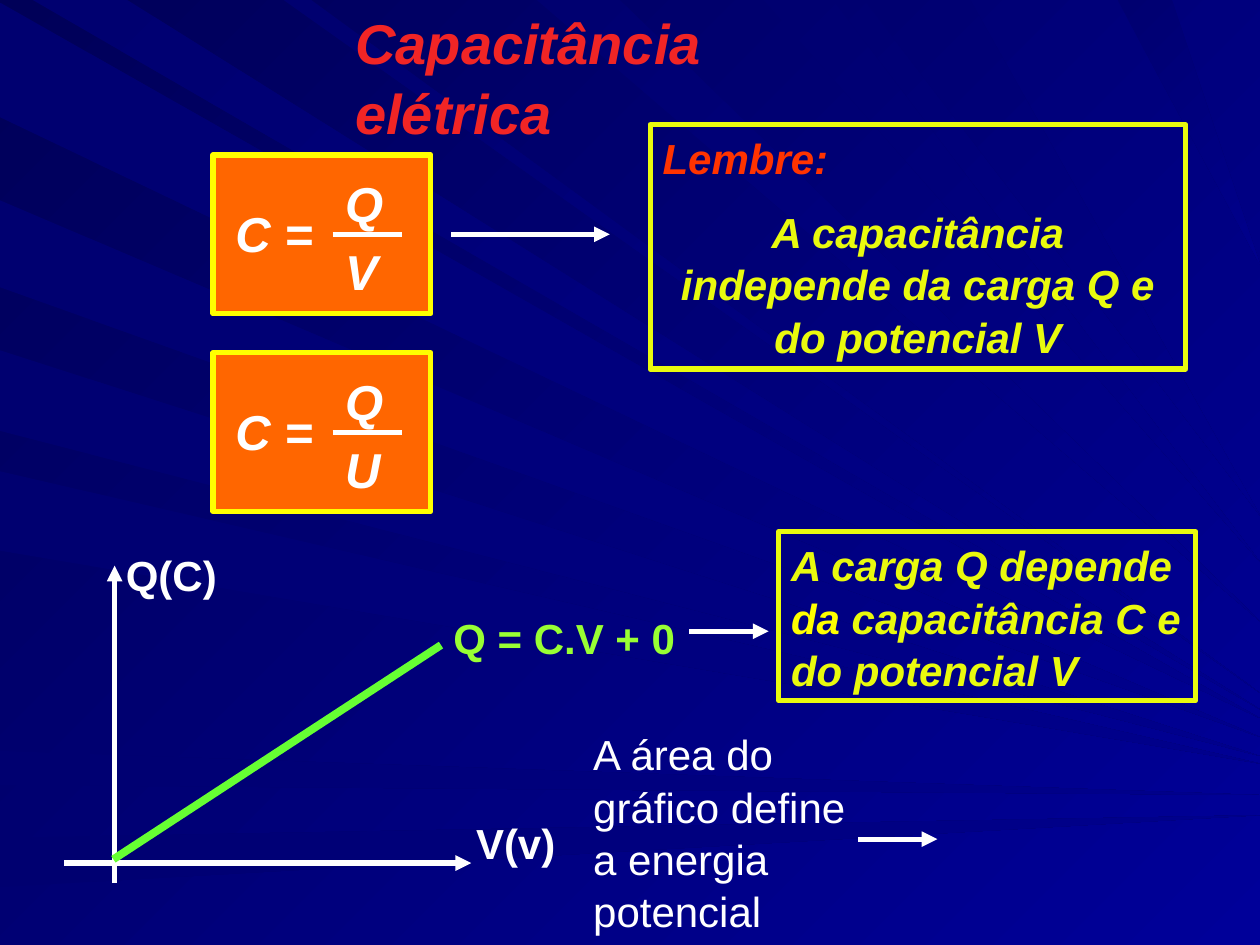
from lxml import etree
from pptx import Presentation
from pptx.dml.color import RGBColor
from pptx.enum.shapes import MSO_CONNECTOR, MSO_SHAPE
from pptx.enum.text import MSO_ANCHOR, PP_ALIGN
from pptx.oxml.ns import qn
from pptx.util import Pt

PX = 9144
WIDTH, HEIGHT = 1000, 750
TOP, MIDDLE = MSO_ANCHOR.TOP, MSO_ANCHOR.MIDDLE
LEFT, CENTER = PP_ALIGN.LEFT, PP_ALIGN.CENTER
RECTANGLE, STRAIGHT = MSO_SHAPE.RECTANGLE, MSO_CONNECTOR.STRAIGHT
COLORS = {
    "title": "F12525", "white": "FFFFFF", "formula": "FF6600", "border": "FFFF00",
    "note": "E9FA0E", "reminder": "FF3300", "curve": "66FF33", "equation": "99FF33",
    "sky_dark": "000058", "sky_light": "000099", "ray_dark": "000070", "ray_light": "00008C",
}
LEFT_RAYS = [(2, 93, 570), (159, 228, 585), (278, 342, 600), (374, 437, 606),
             (596, 623, 631), (665, 704, 647)]
TOP_RAYS = [(26, 101, 563), (225, 247, 550), (426, 492, 493), (606, 661, 446),
            (686, 770, 409), (887, 930, 210)]


def rgb(name):
    """Return the colour for a palette name."""
    return RGBColor.from_string(COLORS[name])


def emu(*lengths):
    """Turn px into EMU."""
    return [length * PX for length in lengths]


def fade(fill, start, end, angle):
    """Fill with a two-stop gradient turned clockwise by angle."""
    fill.gradient()
    fill.gradient_angle = -angle % 360
    for stop, color in zip(fill.gradient_stops, (start, end)):
        stop.color.rgb = rgb(color)


def write(shape, paragraphs, size=24, bold=True, italic=True, anchor=TOP, wrap=True):
    """Write paragraphs given as (runs, space before, alignment)."""
    frame = shape.text_frame
    frame.word_wrap, frame.vertical_anchor = wrap, anchor
    style = {"name": "Arial", "size": Pt(size), "bold": bold, "italic": italic}
    for index, (runs, before, align) in enumerate(paragraphs):
        paragraph = frame.add_paragraph() if index else frame.paragraphs[0]
        layout = {"alignment": align, "space_before": Pt(before), "line_spacing": 1.04}
        for key, value in layout.items():
            setattr(paragraph, key, value)
        for words, color in runs:
            run = paragraph.add_run()
            run.text = words
            for key, value in style.items():
                setattr(run.font, key, value)
            run.font.color.rgb = rgb(color)


def label(slide, box, words, color="white", **style):
    """Add a text box holding one paragraph."""
    write(slide.shapes.add_textbox(*emu(*box)), [([(words, color)], 0, LEFT)], **style)


def panel(slide, box, border, fill=None):
    """Add a bordered rectangle."""
    shape = slide.shapes.add_shape(RECTANGLE, *emu(*box))
    shape.shadow.inherit = False
    if fill:
        shape.fill.solid()
        shape.fill.fore_color.rgb = rgb(fill)
    else:
        shape.fill.background()
    shape.line.color.rgb, shape.line.width = rgb(border), Pt(3)
    return shape


def stroke(slide, ends, color="white", width=3, arrow=True):
    """Draw a straight line, with an arrowhead at its end if asked."""
    connector = slide.shapes.add_connector(STRAIGHT, *emu(*ends))
    connector.line.color.rgb, connector.line.width = rgb(color), Pt(width)
    properties = connector._element.spPr
    if arrow:
        etree.SubElement(properties.find(qn("a:ln")), qn("a:tailEnd"), type="triangle")
    etree.SubElement(properties, qn("a:effectLst"))


def ray(slide, start, end, tip, angle):
    """Draw one ray from an edge of the slide to a tip on its right edge."""
    outline = slide.shapes.build_freeform(*start, scale=PX)
    outline.add_line_segments([end, (WIDTH, tip)])
    beam = outline.convert_to_shape()
    beam.shadow.inherit = False
    beam.line.fill.background()
    fade(beam.fill, "ray_dark", "ray_light", angle)


def backdrop(slide):
    """Paint the blue background and its rays."""
    fade(slide.background.fill, "sky_dark", "sky_light", 45)
    for start, end, tip in LEFT_RAYS:
        ray(slide, (0, start), (0, end), tip, 0)
    for start, end, tip in TOP_RAYS:
        ray(slide, (start, 0), (end, 0), tip, 45)


def heading(slide, box):
    """Place the title above the backdrop."""
    title = slide.shapes.title
    slide.shapes._spTree.append(title._element)
    for key, value in zip(("left", "top", "width", "height"), emu(*box)):
        setattr(title, key, value)
    title.text_frame.margin_right = 100 * PX
    write(title, [([("Capacitância elétrica", "title")], 0, LEFT)], size=32)


def formula(slide, box, denominator):
    """Draw the boxed fraction C = Q over the denominator."""
    left, top, _, height = box
    bar, middle = left + 95, top + height // 2
    panel(slide, box, "border", "formula")
    label(slide, (left + 8, top + 32, 102, 57), "C =", size=28)
    fraction = slide.shapes.add_textbox(*emu(bar, top + 8, 157, 110))
    write(fraction, [([(part, "white")], before, LEFT)
                     for part, before in (("Q", 0), (denominator, 4))], size=28)
    stroke(slide, (bar, middle, bar + 55, middle), arrow=False)


def reminder(slide, box):
    """Write the boxed reminder about capacitance."""
    write(panel(slide, box, "note"), [
        ([("Lembre:", "reminder")], 0, LEFT),
        ([("A capacitância independe da carga Q e do potencial V", "note")], 12, CENTER)])


def charge_note(slide, box):
    """Write the boxed note about charge."""
    write(panel(slide, box, "note"), [
        ([("A carga Q depende ", "note"), ("da ", "border"),
          ("capacitância C e do potencial V", "note")], 0, LEFT)])


def charge_graph(slide, box):
    """Sketch charge against potential with its axes and labels."""
    left, top, width, height = box
    base, axis, curve_end = top + height - 16, left + 40, left + 299
    stroke(slide, (axis, top + height, axis, top))
    stroke(slide, (left, base, left + width, base))
    stroke(slide, (axis - 1, base - 3, curve_end, top + 63), "curve", 4.5, arrow=False)
    for x, y, length, words, color in (
            (axis - 1, top - 19, 92, "Q(C)", "white"),
            (left + 317, base - 42, 83, "V(v)", "white"),
            (curve_end, top + 31, 196, "Q = C.V + 0", "equation")):
        label(slide, (x, y, length, 50), words, color,
              italic=False, anchor=MIDDLE, wrap=False)


def main():
    """Build and save the slide."""
    deck = Presentation()
    deck.slide_width, deck.slide_height = emu(WIDTH, HEIGHT)
    slide = deck.slides.add_slide(deck.slide_layouts[5])
    backdrop(slide)
    heading(slide, (272, 0, 461, 63))
    for top, denominator in ((123, "V"), (280, "U")):
        formula(slide, (169, top, 173, 126), denominator)
    reminder(slide, (516, 99, 425, 194))
    charge_graph(slide, (51, 449, 323, 252))
    charge_note(slide, (618, 422, 331, 134))
    label(slide, (461, 575, 220, 170), "A área do gráfico define a energia potencial",
          bold=False, italic=False, anchor=MIDDLE)
    for start, end, level in ((358, 484, 186), (547, 610, 501), (681, 744, 666)):
        stroke(slide, (start, level, end, level))
    deck.save("out.pptx")


if __name__ == "__main__":
    main()
